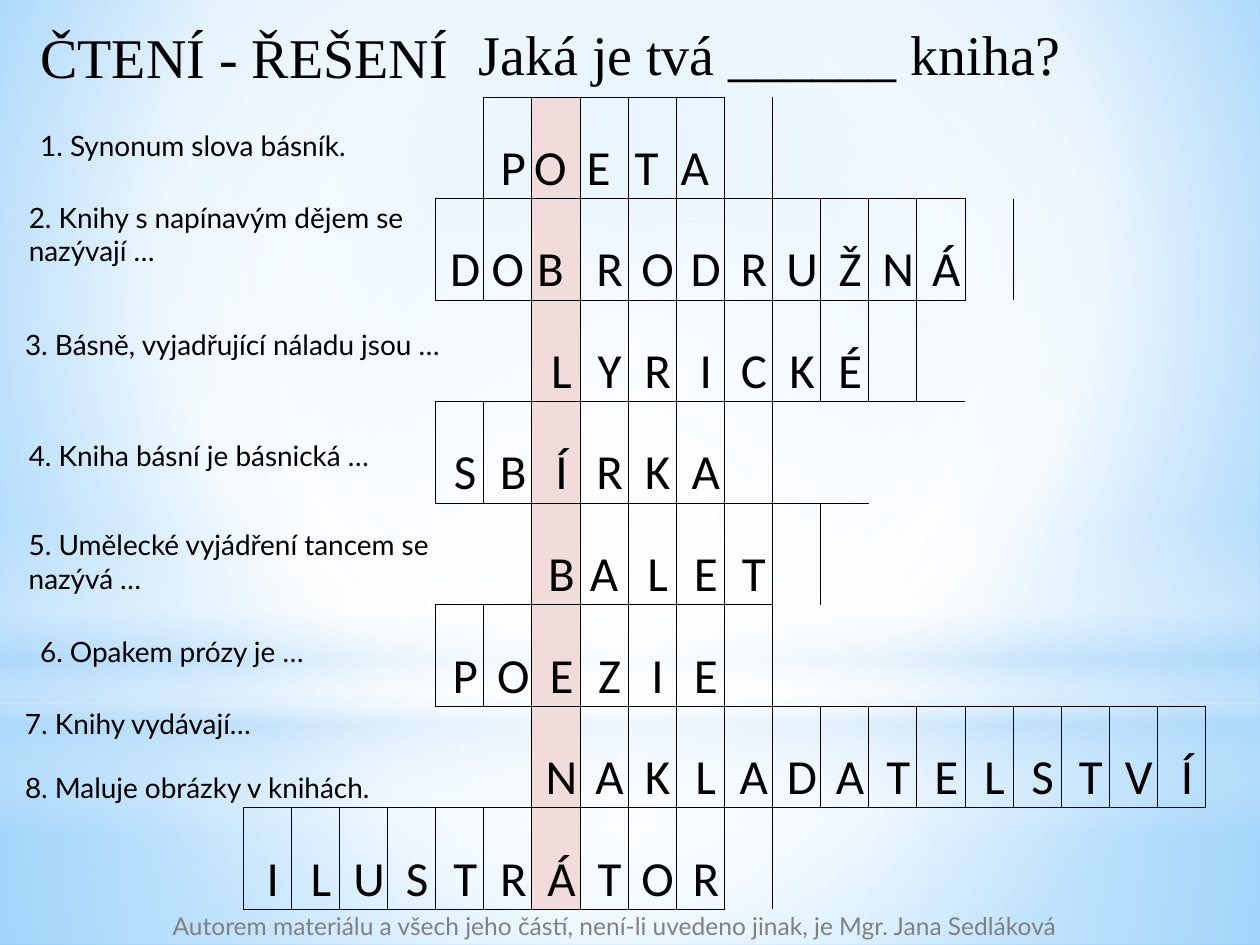
from dataclasses import dataclass

from lxml import etree
from pptx import Presentation, util as u
from pptx.dml.color import RGBColor
from pptx.enum import shapes, text
from pptx.oxml import ns


@dataclass(frozen=True)
class Theme:
    ink: str = "000000"
    credit: str = "808080"
    key: str = "F2DCDB"
    white: str = "FFFFFF"
    haze: str = "B4DCFA"
    title_font: str = "Times New Roman"
    clue_font: str = "Lato"
    letter_font: str = "Calibri"
    title_size: int = 32
    letter_size: int = 28
    clue_size: int = 16
    credit_size: int = 14


theme = Theme()


def set_gradient(fill, holder, stops, focus=None):
    """Fill with (position, colour, opacity) stops, round when a focus is given."""
    fill.gradient()
    gradient = holder.find(".//" + ns.qn("a:gradFill"))
    for child in list(gradient):
        gradient.remove(child)
    stop_list = etree.SubElement(gradient, ns.qn("a:gsLst"))
    for position, colour, opacity in stops:
        stop = etree.SubElement(stop_list, ns.qn("a:gs"), pos=str(position * 1000))
        tint = etree.SubElement(stop, ns.qn("a:srgbClr"), val=colour)
        etree.SubElement(tint, ns.qn("a:alpha"), val=str(opacity * 1000))
    if focus is None:
        etree.SubElement(gradient, ns.qn("a:lin"), ang="5400000", scaled="0")
    else:
        circle = etree.SubElement(gradient, ns.qn("a:path"), path="circle")
        sides = {side: str(value * 1000) for side, value in zip("ltrb", focus)}
        etree.SubElement(circle, ns.qn("a:fillToRect"), **sides)


def write(frame, words, font, size, colour):
    """Put one formatted paragraph into a text frame."""
    frame.text = words
    para = frame.paragraphs[0]
    for span in para.runs:
        span.font.name = font
        span.font.size = u.Pt(size)
        span.font.color.rgb = RGBColor.from_string(colour)
    return para


deck = Presentation()
deck.slide_width, deck.slide_height = u.Inches(10), u.Inches(7.5)
page = deck.slides.add_slide(deck.slide_layouts[5])

# Background and its soft layers of light
centre = (50, 50, 50, 50)
white, haze = theme.white, theme.haze
set_gradient(page.background.fill, page.element,
             [(0, "9ED5FF", 100), (60, white, 100), (100, "5BB9FF", 100)],
             (20, 10, 20, 60))
rectangle, oval = shapes.MSO_SHAPE.RECTANGLE, shapes.MSO_SHAPE.OVAL
layers = [
    (rectangle, 5.58, 1.92, [(0, white, 91), (37, white, 76), (100, haze, 79)], centre),
    (rectangle, 0, 5.58, [(0, white, 89), (48, white, 62), (100, haze, 79)], centre),
    (rectangle, 4.12, 2.5, [(0, white, 0), (29, white, 30), (45, haze, 40),
                            (55, white, 26), (65, haze, 60), (100, white, 0)], None),
    (oval, 1.75, 5.58, [(0, white, 100), (56, white, 0)], centre),
]
for kind, top, height, stops, focus in layers:
    layer = page.shapes.add_shape(kind, 0, u.Inches(top), u.Inches(10), u.Inches(height))
    layer.shadow.inherit = False
    layer.line.fill.background()
    set_gradient(layer.fill, layer.element, stops, focus)

# Crossword: first column, word, and the side on which each letter is padded
# (< before, > after, - not at all; letters without a mark are padded before)
answers = [
    (5, "POETA", "<>>>>"),
    (4, "DOBRODRUŽNÁ", "<->"),
    (6, "LYRICKÉ", ""),
    (4, "SBÍRKA", ""),
    (6, "BALET", "<-"),
    (4, "POEZIE", ""),
    (6, "NAKLADATELSTVÍ", ""),
    (0, "ILUSTRÁTOR", ""),
]
key_column, column_count = 6, 20
pad = chr(160)  # no-break space
letters = {}
for row, (start, word, marks) in enumerate(answers):
    for offset, (letter, mark) in enumerate(zip(word, marks.ljust(len(word), "<"))):
        before, after = pad * (mark == "<"), pad * (mark == ">")
        letters[row, start + offset] = before + letter + after

grid = page.shapes.add_table(len(answers), column_count, u.Inches(1.93), u.Inches(0.77),
                             u.Inches(7.64), u.Inches(6.45)).table
grid.first_row = grid.horz_banding = False
style = grid._tbl.tblPr.find(ns.qn("a:tableStyleId"))
style.text = "{2D5ABB26-0587-4C30-8999-92F81FD0307C}"  # no style, no grid
for column in grid.columns:
    column.width = u.Inches(7.64 / column_count)

neighbours = {"lnL": (0, -1), "lnR": (0, 1), "lnT": (-1, 0), "lnB": (1, 0)}
for row in range(len(answers)):
    for column in range(column_count):
        cell = grid.cell(row, column)
        properties = cell._tc.get_or_add_tcPr()
        # An edge is drawn where a letter stands on either side of it
        for edge, (down, right) in neighbours.items():
            if (row, column) in letters or (row + down, column + right) in letters:
                line = etree.SubElement(properties, ns.qn("a:" + edge), w=str(u.Pt(0.5)))
                paint = etree.SubElement(line, ns.qn("a:solidFill"))
                etree.SubElement(paint, ns.qn("a:srgbClr"), val=theme.ink)
        cell.fill.background()
        if (row, column) not in letters:
            continue
        if column == key_column:
            cell.fill.solid()
            cell.fill.fore_color.rgb = RGBColor.from_string(theme.key)
        cell.margin_left = cell.margin_right = cell.margin_top = u.Inches(0.01)
        cell.margin_bottom = 0
        cell.vertical_anchor = text.MSO_ANCHOR.BOTTOM
        para = write(cell.text_frame, letters[row, column],
                     theme.letter_font, theme.letter_size, theme.ink)
        para.alignment = text.PP_ALIGN.CENTER

# Clues
clues = [
    (0.22, 0.97, 3.35, 0.37, "1. Synonum slova básník."),
    (0.13, 1.54, 3.32, 0.64, "2. Knihy s napínavým dějem se nazývají …"),
    (0.1, 2.55, 4.08, 0.37, "3. Básně, vyjadřující náladu jsou …"),
    (0.13, 3.43, 3.32, 0.37, "4. Kniha básní je básnická …"),
    (0.13, 4.14, 4.06, 0.64, "5. Umělecké vyjádření tancem se nazývá …"),
    (0.22, 4.99, 3.23, 0.37, "6. Opakem prózy je …"),
    (0.1, 5.56, 3.2, 0.37, "7. Knihy vydávají…"),
    (0.1, 6.07, 3.85, 0.37, "8. Maluje obrázky v knihách."),
]
for *place, words in clues:
    box = page.shapes.add_textbox(*map(u.Inches, place))
    box.text_frame.word_wrap = True
    write(box.text_frame, words, theme.clue_font, theme.clue_size, theme.ink)

# Title, brought in front of the background layers
title = page.shapes.title
page.shapes._spTree.append(title.element)
title.left, title.top = u.Inches(0.22), u.Inches(0.13)
title.width, title.height = u.Inches(3.49), u.Inches(1.18)
title.text_frame.vertical_anchor = text.MSO_ANCHOR.TOP
title.text_frame.auto_size = text.MSO_AUTO_SIZE.NONE
para = write(title.text_frame, "ČTENÍ - ŘEŠENÍ", theme.title_font, theme.title_size, theme.ink)
para.alignment = text.PP_ALIGN.LEFT

# Question
question = page.shapes.add_textbox(u.Inches(3.7), u.Inches(0.11), u.Inches(5.53), u.Inches(0.94))
question.text_frame.word_wrap = True
write(question.text_frame, "Jaká je tvá ______ kniha?",
      theme.title_font, theme.title_size, theme.ink)

# Credit line
credit = page.shapes.add_textbox(u.Inches(1.37), u.Inches(7.08), u.Inches(8.41), u.Inches(0.53))
credit.text_frame.word_wrap = True
credit.text_frame.margin_left = 0
credit.text_frame.vertical_anchor = text.MSO_ANCHOR.MIDDLE
write(credit.text_frame,
      "Autorem materiálu a všech jeho částí, není-li uvedeno jinak, je Mgr. Jana Sedláková",
      theme.clue_font, theme.credit_size, theme.credit)

deck.save("out.pptx")
